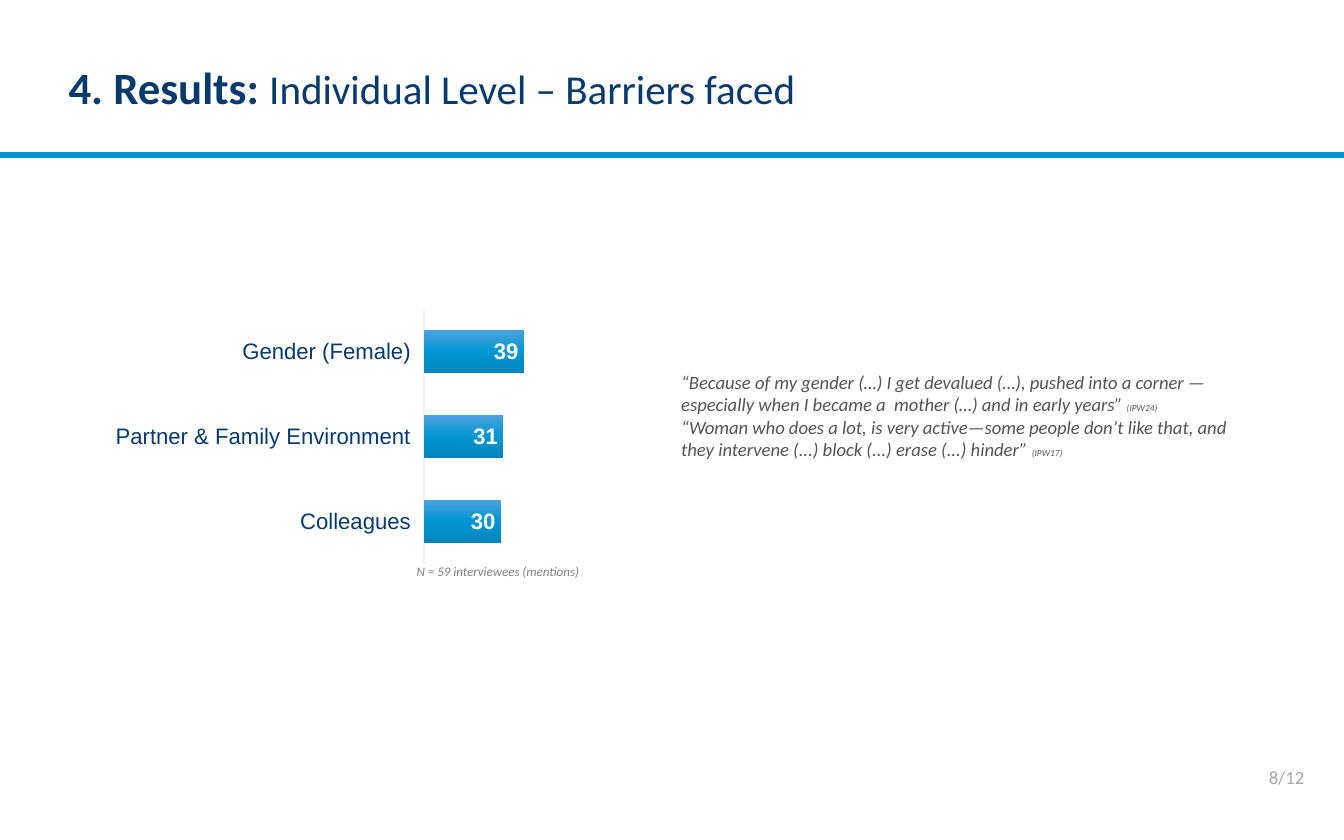
from copy import deepcopy
from lxml.etree import SubElement
from pptx import Presentation
from pptx.chart.data import CategoryChartData
from pptx.dml.color import RGBColor
from pptx.enum.chart import XL_CHART_TYPE, XL_LABEL_POSITION, XL_TICK_LABEL_POSITION, XL_TICK_MARK
from pptx.enum.shapes import MSO_SHAPE
from pptx.enum.text import MSO_ANCHOR, PP_ALIGN
from pptx.oxml.ns import qn
from pptx.util import Inches, Pt

HUES = {
    "navy": "073A6C", "rule": "0C94B7", "blue": "0096D3", "light": "4BA2DA",
    "deep": "0085BC", "quote": "545454", "note": "808080", "page": "A6A6A6",
    "axis": "F2F2F2", "white": "FFFFFF",
}


def hue(name):
    return RGBColor.from_string(HUES[name])


def write(frame, paras, color, inset=(0.05, 0.05), italic=False, anchor=MSO_ANCHOR.TOP):
    frame.word_wrap = True
    frame.vertical_anchor = anchor
    frame.margin_left = frame.margin_right = Inches(inset[0])
    frame.margin_top = frame.margin_bottom = Inches(inset[1])
    for i, runs in enumerate(paras):
        para = frame.add_paragraph() if i else frame.paragraphs[0]
        para.alignment = PP_ALIGN.LEFT
        for text, size, bold in runs:
            run = para.add_run()
            run.text = text
            run.font.name = "Calibri"
            run.font.size = Pt(size)
            run.font.bold = bold
            run.font.italic = italic
            run.font.color.rgb = hue(color)


deck = Presentation()
deck.slide_width, deck.slide_height = Inches(10), Inches(6.25)
slide = deck.slides.add_slide(deck.slide_layouts[5])
shapes = slide.shapes

rule = shapes.add_shape(MSO_SHAPE.RECTANGLE, Inches(0), Inches(1.14), Inches(10), Inches(0.03))
rule.shadow.inherit = False
rule.fill.solid()
rule.fill.fore_color.rgb = hue("rule")
rule.line.color.rgb = hue("blue")
rule.line.width = Pt(1)

title = shapes.title
title.left, title.top = Inches(0.51), Inches(0.15)
title.width, title.height = Inches(7.48), Inches(0.99)
write(title.text_frame,
      [[("4. Results: ", 24, True), ("Individual Level – Barriers faced", 22, False)]],
      "navy", inset=(0, 0), anchor=MSO_ANCHOR.MIDDLE)

quotes = [
    ("“Because of my gender (…) I get devalued (…), pushed into a corner — "
     "especially when I became a  mother (…) and in early years” ", "(IPW24)"),
    ("“Woman who does a lot, is very active—some people don’t like that, and "
     "they intervene (...) block (...) erase (...) hinder” ", "(IPW17)"),
]
box = shapes.add_textbox(Inches(4.97), Inches(2.71), Inches(4.41), Inches(1.53))
write(box.text_frame, [[(text, 10, False), (ref, 5, False)] for text, ref in quotes],
      "quote", inset=(0.1, 0.05), italic=True)

note = shapes.add_textbox(Inches(3.05), Inches(4.14), Inches(2.4), Inches(0.22))
write(note.text_frame, [[("N = 59 interviewees (mentions)", 7, False)]], "note", italic=True)

page = shapes.add_textbox(Inches(9.39), Inches(5.65), Inches(0.95), Inches(0.27))
write(page.text_frame, [[("8/12", 10, False)]], "page")

data = CategoryChartData()
data.categories = ["Colleagues", "Partner & Family Environment", "Gender (Female)"]
data.add_series("Series 1", [30, 31, 39])
chart = shapes.add_chart(XL_CHART_TYPE.BAR_CLUSTERED, Inches(0.86), Inches(1.79),
                         Inches(5.14), Inches(2.56), data).chart
chart.has_legend = chart.has_title = False
chart.font.name = "Arial"
chart.font.size = Pt(10)
chart.font.color.rgb = hue("navy")

cats = chart.category_axis
cats.major_tick_mark = cats.minor_tick_mark = XL_TICK_MARK.NONE
cats.tick_label_position = XL_TICK_LABEL_POSITION.LOW
cats.has_major_gridlines = False
cats.tick_labels.font.name = "Arial"
cats.tick_labels.font.size = Pt(12)
cats.tick_labels.font.color.rgb = hue("navy")
cats.format.line.color.rgb = hue("axis")
cats.format.line.width = Pt(0.75)

scale = chart.value_axis
scale.minimum_scale, scale.maximum_scale = 0, 40
scale.has_major_gridlines = False
scale.visible = False

plot = chart.plots[0]
plot.gap_width = 100
plot.vary_by_categories = False
bars = plot.series[0]
fill = bars.format.fill
fill.gradient()
fill.gradient_angle = 270
stops = bars._element.find(".//" + qn("a:gsLst"))
stops.append(deepcopy(stops[0]))
for stop, name, place in zip(fill.gradient_stops, ["light", "blue", "deep"], [0, 0.5, 1]):
    stop.color.rgb = hue(name)
    stop.position = place

labels = bars.data_labels
labels.show_value = True
labels.position = XL_LABEL_POSITION.INSIDE_END
labels.font.name = "Arial"
labels.font.size = Pt(12)
labels.font.bold = True
labels.font.color.rgb = hue("white")

area = chart._chartSpace.find(".//" + qn("c:plotArea"))
for old in area.findall(qn("c:layout")):
    area.remove(old)
layout = SubElement(area, qn("c:layout"))
area.insert(0, layout)
manual = SubElement(layout, qn("c:manualLayout"))
for tag, val in [("layoutTarget", "inner"), ("xMode", "edge"), ("yMode", "edge"),
                 ("x", 0.44), ("y", 0.2), ("w", 0.15), ("h", 0.74)]:
    SubElement(manual, qn("c:" + tag)).set("val", str(val))

deck.save("out.pptx")
